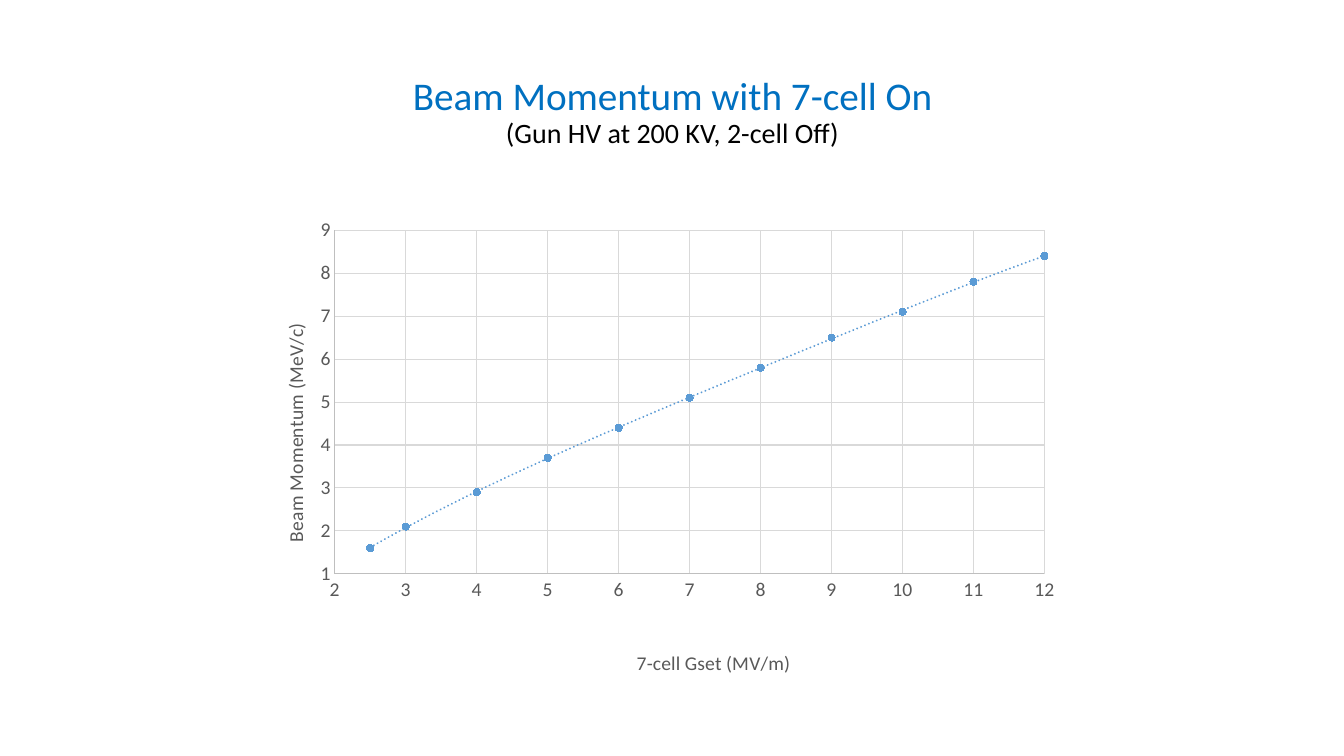
from pptx import Presentation
from pptx.chart.data import XyChartData
from pptx.dml.color import RGBColor
from pptx.enum.chart import XL_CHART_TYPE, XL_MARKER_STYLE, XL_TICK_MARK
from pptx.enum.text import MSO_ANCHOR, PP_ALIGN
from pptx.oxml import parse_xml
from pptx.oxml.ns import nsdecls, qn
from pptx.util import Inches, Pt

SCATTER = XL_CHART_TYPE.XY_SCATTER
CIRCLE = XL_MARKER_STYLE.CIRCLE
NO_TICKS = XL_TICK_MARK.NONE
MIDDLE = MSO_ANCHOR.MIDDLE
CENTER = PP_ALIGN.CENTER

FONT = "Calibri"
HEADING_BLUE = RGBColor(0x00, 0x70, 0xC0)
BLACK = RGBColor(0x00, 0x00, 0x00)
AXIS_TEXT = RGBColor(0x59, 0x59, 0x59)
AXIS_LINE = RGBColor(0xBF, 0xBF, 0xBF)
GRID_LINE = RGBColor(0xD9, 0xD9, 0xD9)
DATA_BLUE = RGBColor(0x5B, 0x9B, 0xD5)

GRADIENTS = [2.5, *range(3, 13)]
MOMENTA = [1.6, 2.1, 2.9, 3.7, 4.4, 5.1, 5.8, 6.5, 7.1, 7.8, 8.4]


def style_font(font, size, color):
    font.name = FONT
    font.size = Pt(size)
    font.bold = False
    font.color.rgb = color


def add_text(paragraph, text, size, color):
    run = paragraph.add_run()
    run.text = text
    style_font(run.font, size, color)


def style_line(line, color):
    line.color.rgb = color
    line.width = Pt(0.75)


def layout_xml(x, y, size=None):
    target = '<c:layoutTarget val="inner"/>' if size else ""
    extent = f'<c:w val="{size[0]}"/><c:h val="{size[1]}"/>' if size else ""
    return parse_xml(
        f'<c:layout {nsdecls("c")}><c:manualLayout>{target}'
        '<c:xMode val="edge"/><c:yMode val="edge"/>'
        f'<c:x val="{x}"/><c:y val="{y}"/>{extent}'
        "</c:manualLayout></c:layout>")


def remove_layout(element):
    for layout in element.findall(qn("c:layout")):
        element.remove(layout)


def style_axis(axis, title, low, high, position, rotation):
    axis.minimum_scale, axis.maximum_scale = low, high
    axis.major_unit = 1
    axis.major_tick_mark = axis.minor_tick_mark = NO_TICKS
    axis.has_major_gridlines = True
    style_line(axis.major_gridlines.format.line, GRID_LINE)
    style_line(axis.format.line, AXIS_LINE)
    style_font(axis.tick_labels.font, 14, AXIS_TEXT)
    axis.tick_labels.number_format = "General"
    axis.tick_labels.number_format_is_linked = False
    add_text(axis.axis_title.text_frame.paragraphs[0], title, 14, AXIS_TEXT)
    title_element = axis.axis_title._element
    remove_layout(title_element)
    title_text = title_element.find(qn("c:tx"))
    title_text.addnext(layout_xml(*position))
    title_text.find(".//" + qn("a:bodyPr")).set("rot", str(rotation * 60000))


def add_trendline(series):
    trendline = parse_xml(
        f'<c:trendline {nsdecls("c", "a")}><c:spPr><a:ln w="{Pt(1.5)}" cap="rnd">'
        f'<a:solidFill><a:srgbClr val="{DATA_BLUE}"/></a:solidFill>'
        '<a:prstDash val="sysDot"/></a:ln></c:spPr>'
        '<c:trendlineType val="poly"/><c:order val="4"/>'
        '<c:dispRSqr val="0"/><c:dispEq val="0"/></c:trendline>')
    series._element.find(qn("c:xVal")).addprevious(trendline)


def add_heading(slide):
    box = slide.shapes.add_textbox(Inches(0.92), Inches(0.4), Inches(11.5), Inches(1.45))
    frame = box.text_frame
    frame.word_wrap = True
    frame.vertical_anchor = MIDDLE
    heading = frame.paragraphs[0]
    heading.alignment = CENTER
    heading.line_spacing = 0.9
    add_text(heading, "Beam Momentum with 7-cell On", 28, HEADING_BLUE)
    heading.add_line_break()
    add_text(heading, "(Gun HV at 200 KV, 2-cell Off)", 20, BLACK)


def add_momentum_chart(slide):
    data = XyChartData()
    points = data.add_series("Beam Momentum")
    for gradient, momentum in zip(GRADIENTS, MOMENTA):
        points.add_data_point(gradient, momentum)
    chart = slide.shapes.add_chart(
        SCATTER, Inches(2.52), Inches(2), Inches(8), Inches(4.76), data).chart
    chart.has_title = False
    chart.has_legend = False
    style_font(chart.font, 10, BLACK)

    plot = chart.plots[0]
    plot.vary_by_categories = False
    series = plot.series[0]
    series.smooth = False
    series.format.line.fill.background()
    series.marker.style = CIRCLE
    series.marker.size = 5
    series.marker.format.fill.solid()
    series.marker.format.fill.fore_color.rgb = DATA_BLUE
    style_line(series.marker.format.line, DATA_BLUE)
    add_trendline(series)

    style_axis(chart.category_axis, "7-cell Gset (MV/m)", 2, 12, (0.47, 0.93), 0)
    style_axis(chart.value_axis, "Beam Momentum (MeV/c)", 1, 9, (0.03, 0.25), -90)
    plot_area = chart._chartSpace.find(".//" + qn("c:plotArea"))
    remove_layout(plot_area)
    plot_area.insert(0, layout_xml(0.1, 0.06, (0.88, 0.72)))


def main():
    prs = Presentation()
    prs.slide_width, prs.slide_height = Inches(13.33), Inches(7.5)
    slide = prs.slides.add_slide(prs.slide_layouts[6])
    add_heading(slide)
    add_momentum_chart(slide)
    prs.save("out.pptx")


if __name__ == "__main__":
    main()
